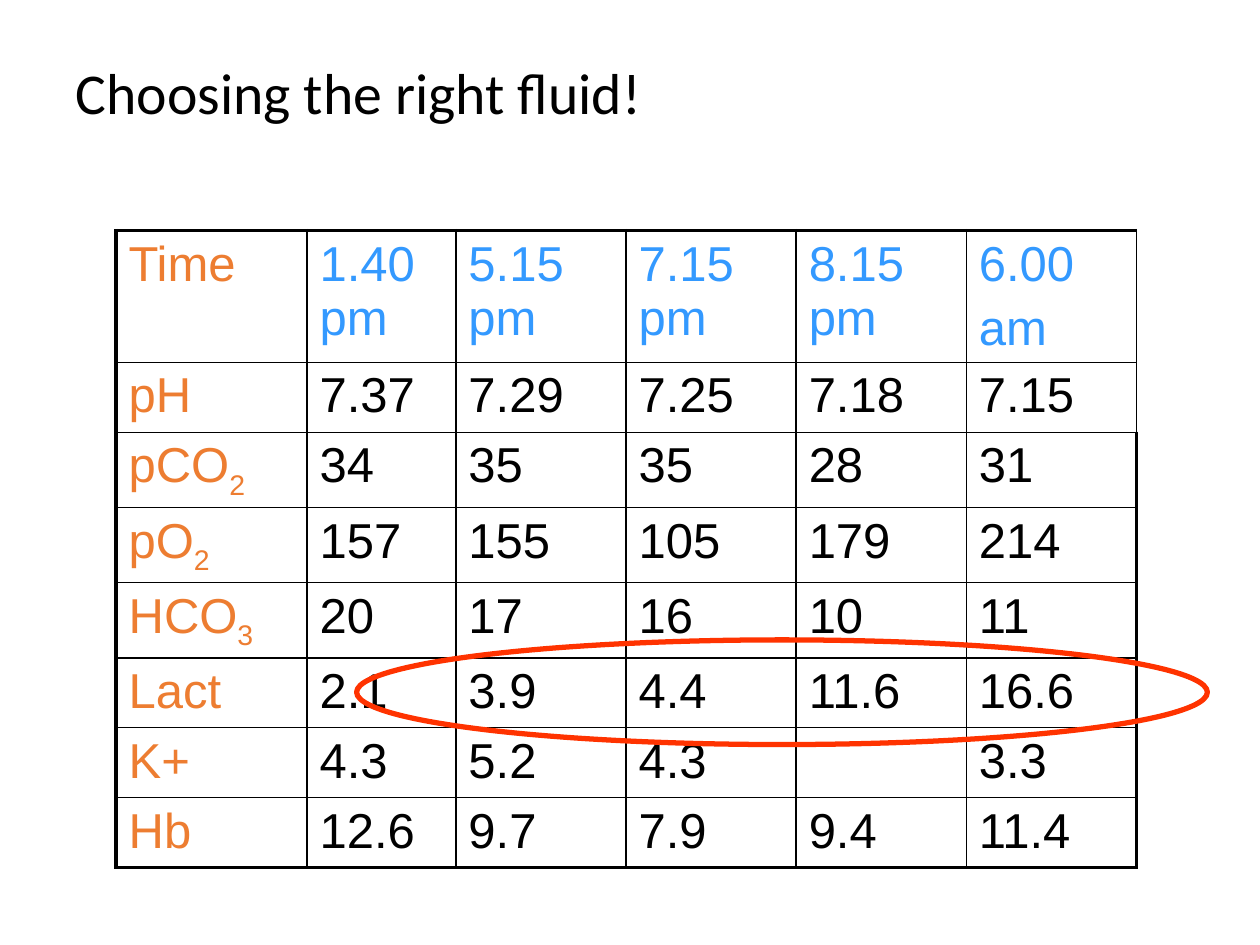
from lxml import etree
from pptx import Presentation
from pptx.dml.color import RGBColor
from pptx.enum.shapes import MSO_SHAPE
from pptx.enum.text import MSO_ANCHOR, PP_ALIGN
from pptx.oxml.ns import qn
from pptx.util import Cm, Pt

ELLIPSE = MSO_SHAPE.OVAL
MIDDLE = MSO_ANCHOR.MIDDLE
LEFT = PP_ALIGN.LEFT

BLACK, ORANGE, BLUE, RED = "000000", "ED7D31", "3399FF", "FF3300"
THIN, THICK = 1, 2.25

# A line break starts a new paragraph; "_" marks the next part as subscript.
ROWS = [
    ["Time", "1.40 pm", "5.15 pm", "7.15 pm", "8.15 pm", "6.00\nam"],
    ["pH", "7.37", "7.29", "7.25", "7.18", "7.15"],
    ["pCO_2", "34", "35", "35", "28", "31"],
    ["pO_2", "157", "155", "105", "179", "214"],
    ["HCO_3", "20", "17", "16", "10", "11"],
    ["Lact", "2.1", "3.9", "4.4", "11.6", "16.6"],
    ["K+", "4.3", "5.2", "4.3", "", "3.3"],
    ["Hb", "12.6", "9.7", "7.9", "9.4", "11.4"],
]
COL_WIDTHS = [3.85, 3] + [3.43] * 4
ROW_HEIGHT = 1.41


def rgb(color):
    return RGBColor.from_string(color)


def set_borders(cell, widths):
    """Draw solid black cell borders; widths are points for left, right, top, bottom."""
    tcPr = cell._tc.get_or_add_tcPr()
    for i, (side, width) in enumerate(zip("LRTB", widths)):
        ln = etree.Element(qn(f"a:ln{side}"), w=str(Pt(width)))
        fill = etree.SubElement(ln, qn("a:solidFill"))
        etree.SubElement(fill, qn("a:srgbClr"), val=BLACK)
        tcPr.insert(i, ln)


prs = Presentation()
prs.slide_width, prs.slide_height = Cm(25.4), Cm(19.05)
s = prs.slides.add_slide(prs.slide_layouts[5])

# Title
title = s.shapes.title
title.left, title.top, title.width, title.height = Cm(1.27), Cm(0.76), Cm(22.86), Cm(2.34)
tf = title.text_frame
tf.text = "Choosing the right fluid!"
tf.vertical_anchor = MIDDLE
p = tf.paragraphs[0]
p.alignment = LEFT
p.line_spacing = 0.9
p.font.name, p.font.size = "Calibri", Pt(33)
p.font.color.rgb = rgb(BLACK)

# Blood gas table
table = s.shapes.add_table(
    len(ROWS), len(COL_WIDTHS), Cm(2.34), Cm(4.65),
    Cm(sum(COL_WIDTHS)), Cm(ROW_HEIGHT * len(ROWS)),
).table
table.first_row = table.horz_banding = False
for column, width in zip(table.columns, COL_WIDTHS):
    column.width = Cm(width)

last_row, last_col = len(ROWS) - 1, len(COL_WIDTHS) - 1
for r, values in enumerate(ROWS):
    table.rows[r].height = Cm(ROW_HEIGHT)
    for c, value in enumerate(values):
        cell = table.cell(r, c)
        cell.fill.background()
        set_borders(cell, [
            THICK if c == 0 else THIN,
            THICK if c == last_col and r >= 2 else THIN,
            THICK if r == 0 else THIN,
            THICK if r == last_row else THIN,
        ])
        color = ORANGE if c == 0 else BLUE if r == 0 else BLACK
        tf = cell.text_frame
        for i, line in enumerate(value.split("\n")):
            p = tf.add_paragraph() if i else tf.paragraphs[0]
            p.space_before = Pt(5.6)
            p.font.name, p.font.size = "Arial", Pt(28)
            p.font.color.rgb = rgb(color)
            base, _, subscript = line.partition("_")
            if base:
                p.add_run().text = base
            if subscript:
                run = p.add_run()
                run.text = subscript
                run.font._element.set("baseline", "-25000")

# Ring around the rising lactate values
ring = s.shapes.add_shape(ELLIPSE, Cm(7.19), Cm(12.9), Cm(17.15), Cm(2.11))
ring.shadow.inherit = False
ring.fill.background()
ring.line.color.rgb = rgb(RED)
ring.line.width = Pt(3)

prs.save("out.pptx")
